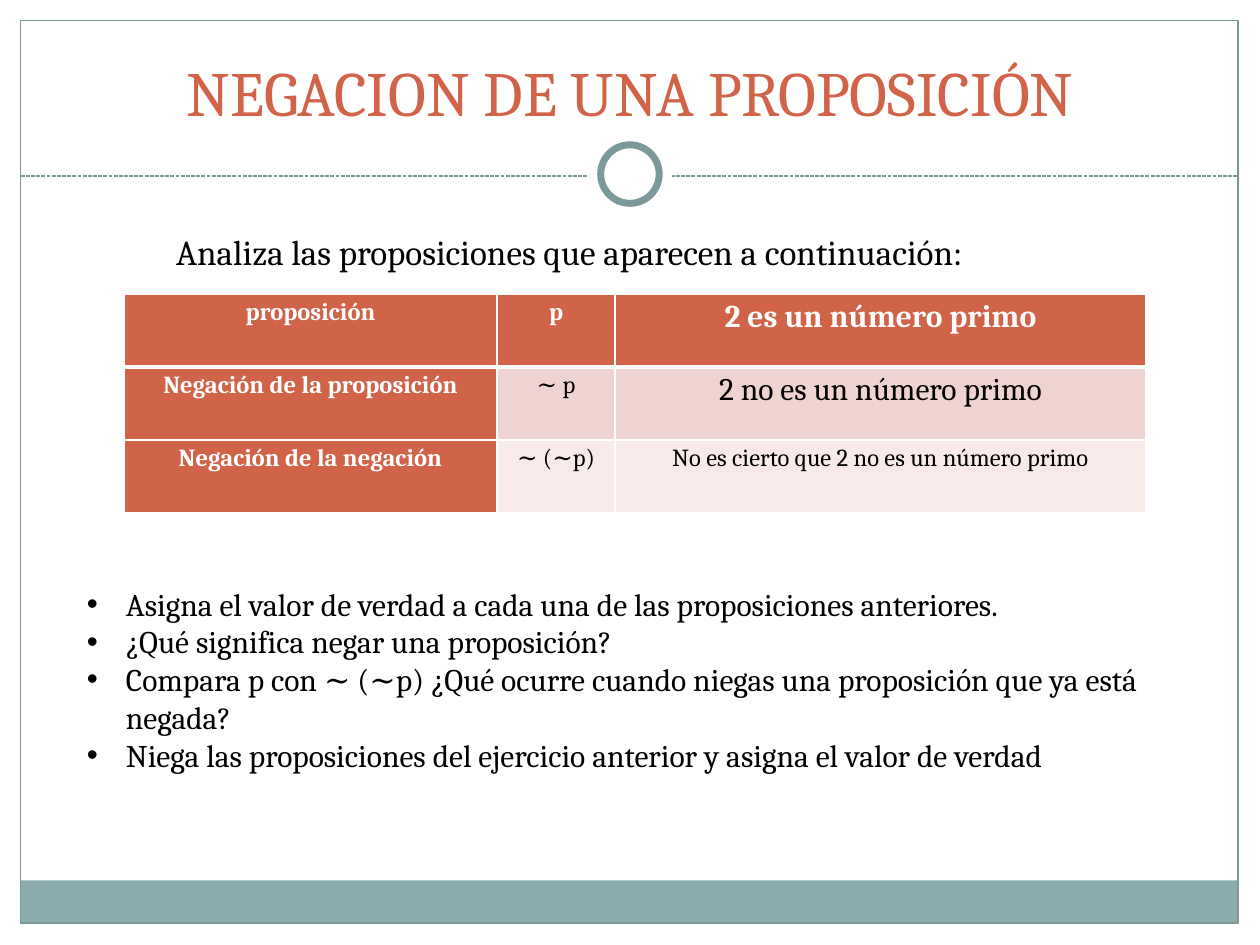
from lxml.etree import SubElement
from pptx import Presentation
from pptx.dml.color import RGBColor
from pptx.enum.dml import MSO_LINE as Dash
from pptx.enum.shapes import MSO_CONNECTOR as Conn, MSO_SHAPE as Shape
from pptx.enum.text import MSO_ANCHOR as Anchor, MSO_AUTO_SIZE as Fit, PP_ALIGN as Align
from pptx.oxml.ns import qn
from pptx.util import Cm, Pt

WHITE = RGBColor(0xFF, 0xFF, 0xFF)
BLACK = RGBColor(0, 0, 0)
RUST = RGBColor(0xD1, 0x63, 0x49)
TEAL = RGBColor(0x8C, 0xAD, 0xAE)
SLATE = RGBColor(0x7C, 0x99, 0x9A)
ROSE = RGBColor(0xEE, 0xD3, 0xD0)
PALE = RGBColor(0xF7, 0xEA, 0xE9)

ROWS = [
    [("proposición", 14), ("p", 14), ("2 es un número primo", 18)],
    [("Negación de la proposición", 14), ("∼ p", 14), ("2 no es un número primo", 18)],
    [("Negación de la negación", 14), ("∼ (∼p)", 14),
     ("No es cierto que 2 no es un número primo", 14)],
]
TASKS = [
    "Asigna el valor de verdad a cada una de las proposiciones anteriores.",
    "¿Qué significa negar una proposición?",
    "Compara p con ∼ (∼p) ¿Qué ocurre cuando niegas una proposición que ya está negada?",
    "Niega las proposiciones del ejercicio anterior y asigna el valor de verdad",
]


class Board:
    def __init__(self, slide, font="Cambria"):
        self.slide = slide
        self.font = font

    def add_run(self, para, text, size, color=BLACK, bold=False):
        run = para.add_run()
        run.text = text
        font = run.font
        font.name, font.size, font.bold = self.font, Pt(size), bold
        font.color.rgb = color

    def shape(self, kind, x, y, w, h, fill=None, line=None, width=0.75):
        item = self.slide.shapes.add_shape(kind, Cm(x), Cm(y), Cm(w), Cm(h))
        item.shadow.inherit = False
        if fill is None:
            item.fill.background()
        else:
            item.fill.solid()
            item.fill.fore_color.rgb = fill
        if line is None:
            item.line.fill.background()
        else:
            item.line.color.rgb = line
            item.line.width = Pt(width)

    def rule(self, x, y, end):
        """Draw a dashed horizontal line from x to end."""
        item = self.slide.shapes.add_connector(Conn.STRAIGHT, Cm(x), Cm(y), Cm(end), Cm(y))
        item.line.color.rgb = SLATE
        item.line.width = Pt(0.75)
        item.line.dash_style = Dash.SQUARE_DOT
        SubElement(item._element.spPr, qn("a:effectLst"))

    def title(self, text, x, y, w, h):
        item = self.slide.shapes.title
        item.left, item.top, item.width, item.height = Cm(x), Cm(y), Cm(w), Cm(h)
        frame = item.text_frame
        frame.auto_size = Fit.NONE
        frame.vertical_anchor = Anchor.BOTTOM
        para = frame.paragraphs[0]
        para.alignment = Align.CENTER
        self.add_run(para, text, 36, RUST)

    def text(self, lines, x, y, w, h, size, bullet=False):
        frame = self.slide.shapes.add_textbox(Cm(x), Cm(y), Cm(w), Cm(h)).text_frame
        frame.word_wrap = True
        frame.auto_size = Fit.SHAPE_TO_FIT_TEXT
        for i, line in enumerate(lines):
            para = frame.add_paragraph() if i else frame.paragraphs[0]
            self.add_run(para, line, size)
            if bullet:
                self.bullet(para)

    def bullet(self, para):
        props = para._p.get_or_add_pPr()
        props.set("marL", str(Cm(0.79)))
        props.set("indent", str(-Cm(0.79)))
        SubElement(props, qn("a:buFont"), typeface="Arial")
        SubElement(props, qn("a:buChar"), char="•")

    def border(self, cell, side, width):
        line = SubElement(cell._tc.get_or_add_tcPr(), qn("a:ln" + side), w=str(Pt(width)))
        fill = SubElement(line, qn("a:solidFill"))
        SubElement(fill, qn("a:srgbClr"), val=str(WHITE))

    def table(self, rows, x, y, widths, tall):
        grid = self.slide.shapes.add_table(
            len(rows), len(widths), Cm(x), Cm(y),
            Cm(sum(widths)), Cm(tall * len(rows))).table
        for col, wide in zip(grid.columns, widths):
            col.width = Cm(wide)
        for r, row in enumerate(rows):
            grid.rows[r].height = Cm(tall)
            for c, (text, size) in enumerate(row):
                head = r == 0 or c == 0
                cell = grid.cell(r, c)
                cell.margin_left = cell.margin_right = Cm(0.18)
                cell.margin_top = cell.margin_bottom = 0
                for side in "LRTB":
                    thick = (r, side) in ((0, "B"), (1, "T"))
                    self.border(cell, side, 3 if thick else 1)
                cell.fill.solid()
                cell.fill.fore_color.rgb = RUST if head else (PALE, ROSE)[r % 2]
                para = cell.text_frame.paragraphs[0]
                para.alignment = Align.CENTER
                para.line_spacing = 1.15
                self.add_run(para, text, size, WHITE if head else BLACK, head)


def main():
    deck = Presentation()
    deck.slide_width, deck.slide_height = Cm(25.4), Cm(19.05)
    board = Board(deck.slides.add_slide(deck.slide_layouts[5]))

    board.shape(Shape.RECTANGLE, 0.42, 17.75, 24.54, 0.87, fill=TEAL)
    board.shape(Shape.RECTANGLE, 0.42, 0.42, 24.54, 18.19, line=SLATE)
    board.rule(0.42, 3.55, 24.96)
    board.shape(Shape.OVAL, 11.85, 2.66, 1.7, 1.7, fill=WHITE)
    board.shape(Shape.OVAL, 12.11, 2.92, 1.18, 1.18, fill=WHITE, line=SLATE, width=4)

    board.title("NEGACION DE UNA PROPOSICIÓN", 0.85, 0.64, 23.7, 2.1)
    board.table(ROWS, 2.5, 5.93, [7.52, 2.38, 10.7], 1.47)
    board.text(["Analiza las proposiciones que aparecen a continuación:"],
               3.3, 4.52, 19.4, 1.11, 20)
    board.text(TASKS, 1.5, 11.66, 22.6, 4.88, 18, bullet=True)
    deck.save("out.pptx")


if __name__ == "__main__":
    main()
